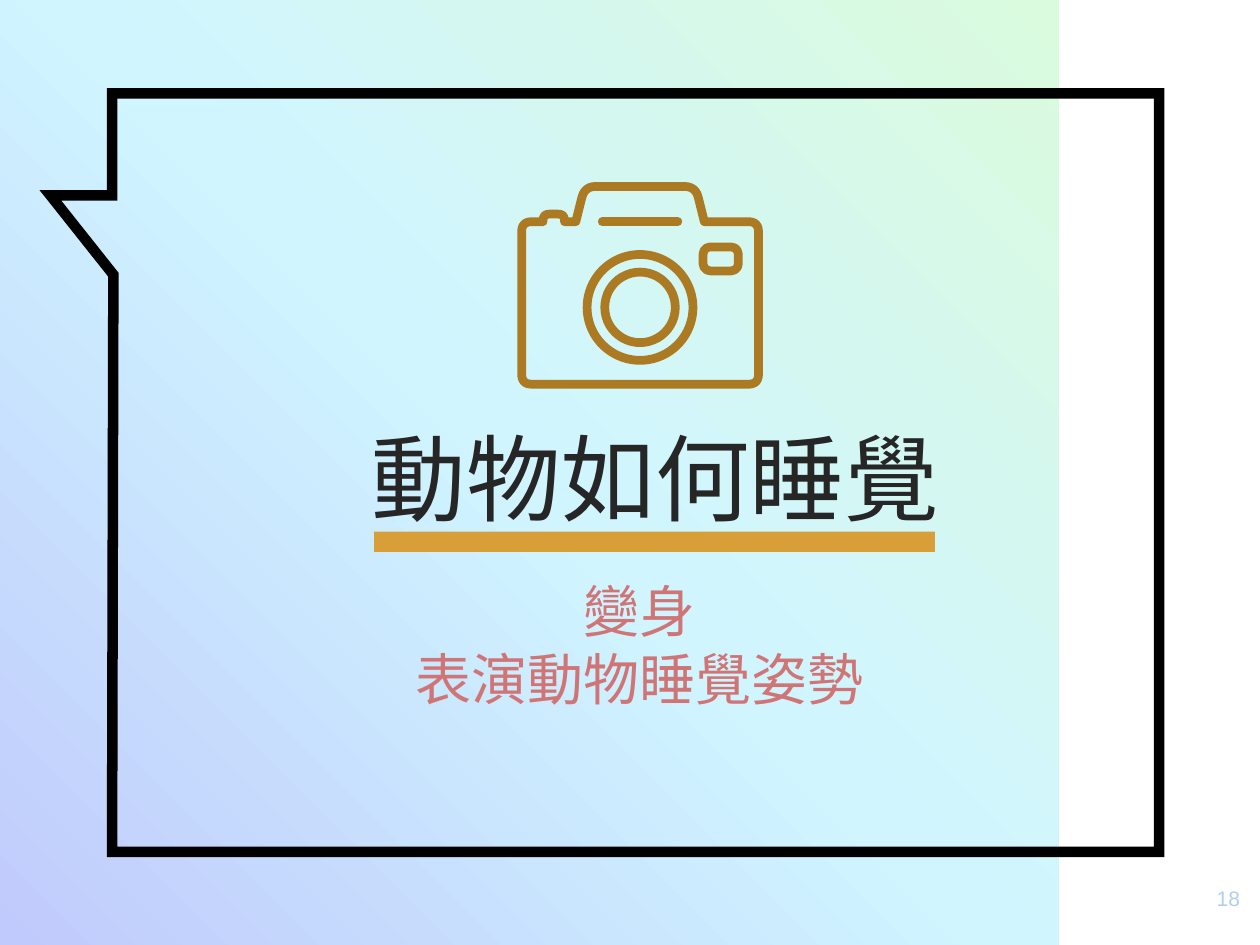
from copy import deepcopy

from lxml import etree
from pptx import Presentation
from pptx.dml.color import RGBColor
from pptx.enum.shapes import MSO_CONNECTOR, MSO_SHAPE
from pptx.enum.text import MSO_ANCHOR, MSO_AUTO_SIZE, PP_ALIGN
from pptx.oxml.ns import qn
from pptx.util import Inches, Pt

RECTANGLE, ROUNDED, OVAL = MSO_SHAPE.RECTANGLE, MSO_SHAPE.ROUNDED_RECTANGLE, MSO_SHAPE.OVAL
STRAIGHT = MSO_CONNECTOR.STRAIGHT
CENTER, RIGHT = PP_ALIGN.CENTER, PP_ALIGN.RIGHT
TOP, MIDDLE = MSO_ANCHOR.TOP, MSO_ANCHOR.MIDDLE
NO_AUTOFIT = MSO_AUTO_SIZE.NONE

THEME = {
    "gradient": ["C0CAFC", "D0F5FF", "DAFBDD"],
    "bubble": "000000", "bubble_width": 6,
    "camera": "AB7A22", "camera_width": 5,
    "underline": "D89F39",
    "title": {"size": 54, "font": "Noto Sans CJK SC", "color": "262626"},
    "subtitle": {"size": 32, "font": "Noto Sans CJK SC", "color": "D07576"},
    "number": {"size": 12, "font": "Arial", "color": "AFCFEC"},
}

TITLE = "動物如何睡覺"
SUBTITLE = ["變身", "表演動物睡覺姿勢"]
SLIDE_NUMBER = "18"

BUBBLE = [(0.89, 0.74), (9.2, 0.74), (9.2, 6.76), (0.89, 6.76),
          (0.9, 2.18), (0.4, 1.55), (0.89, 1.55)]
# Corners of the camera body: x, y, rounding
CAMERA_BODY = [(5.59, 1.76, 0), (5.52, 1.48, 0.09), (4.64, 1.48, 0.09), (4.57, 1.76, 0),
               (4.48, 1.76, 0), (4.48, 1.7, 0.05), (4.31, 1.7, 0.05), (4.31, 1.76, 0),
               (4.14, 1.76, 0.08), (4.14, 3.05, 0.08), (6.02, 3.05, 0.08), (6.02, 1.76, 0.08)]
LENS_CENTER, LENS_RADII = (5.08, 2.44), (0.42, 0.28)
VIEWFINDER = (5.58, 1.96, 0.28, 0.19)
CAMERA_SLOT = (4.78, 5.38, 1.76)


def color(value):
    return RGBColor.from_string(value)


def rounded_outline(corners, steps=6):
    """Replace each rounded corner by points on a quadratic curve."""
    points = []
    for index, (x, y, radius) in enumerate(corners):
        if not radius:
            points.append((x, y))
            continue
        ends = []
        for other_x, other_y, _ in (corners[index - 1], corners[(index + 1) % len(corners)]):
            length = ((other_x - x) ** 2 + (other_y - y) ** 2) ** 0.5
            share = min(radius / length, 1)
            ends.append((x + (other_x - x) * share, y + (other_y - y) * share))
        (start_x, start_y), (end_x, end_y) = ends
        for step in range(steps + 1):
            t = step / steps
            a, b, c = (1 - t) ** 2, 2 * t * (1 - t), t ** 2
            points.append((a * start_x + b * x + c * end_x, a * start_y + b * y + c * end_y))
    return points


def add_filled(slide, kind, box, fill=None):
    shape = slide.shapes.add_shape(kind, *map(Inches, box))
    shape.shadow.inherit = False
    shape.line.fill.background()
    if fill:
        shape.fill.solid()
        shape.fill.fore_color.rgb = color(fill)
    else:
        shape.fill.background()
    return shape


def add_outline(slide, points):
    points = [(Inches(x), Inches(y)) for x, y in points]
    builder = slide.shapes.build_freeform(*points[0])
    builder.add_line_segments(points[1:], close=True)
    shape = builder.convert_to_shape()
    shape.shadow.inherit = False
    shape.fill.background()
    return shape


def style_line(shape, name, join):
    shape.line.color.rgb = color(THEME[name])
    shape.line.width = Pt(THEME[name + "_width"])
    line = shape.line._get_or_add_ln()
    if join == "round":
        line.set("cap", "rnd")
    etree.SubElement(line, qn("a:" + join))


def add_gradient_panel(slide):
    panel = add_filled(slide, RECTANGLE, (0, 0, 8.4, 7.5))
    panel.fill.gradient()
    panel.fill.gradient_angle = 45
    stop_list = panel._element.spPr.find(qn("a:gradFill")).find(qn("a:gsLst"))
    stop_list.append(deepcopy(stop_list[-1]))
    for index, (stop, value) in enumerate(zip(panel.fill.gradient_stops, THEME["gradient"])):
        stop.position = index / 2
        stop.color.rgb = color(value)


def write_text(shape, box, lines, style, align, inset, anchor=TOP):
    shape.left, shape.top, shape.width, shape.height = map(Inches, box)
    frame = shape.text_frame
    frame.word_wrap = True
    frame.auto_size = NO_AUTOFIT
    frame.vertical_anchor = anchor
    frame.margin_left = frame.margin_right = Inches(0.1)
    frame.margin_top = frame.margin_bottom = Inches(inset)
    frame.text = "\n".join(lines)
    for paragraph in frame.paragraphs:
        paragraph.alignment = align
        font = paragraph.font
        font.size = Pt(style["size"])
        font.name = style["font"]
        font.color.rgb = color(style["color"])
        east_asian = etree.Element(qn("a:ea"), typeface=style["font"])
        font._element.find(qn("a:latin")).addnext(east_asian)


def add_camera(slide):
    parts = [add_outline(slide, rounded_outline(CAMERA_BODY))]
    left, right, y = map(Inches, CAMERA_SLOT)
    slot = slide.shapes.add_connector(STRAIGHT, left, y, right, y)
    parts.append(slot)
    x, y = LENS_CENTER
    for radius in LENS_RADII:
        parts.append(add_filled(slide, OVAL, (x - radius, y - radius, 2 * radius, 2 * radius)))
    viewfinder = add_filled(slide, ROUNDED, VIEWFINDER)
    viewfinder.adjustments[0] = 0.3
    parts.append(viewfinder)
    for part in parts:
        style_line(part, "camera", "round")
    etree.SubElement(slot._element.spPr, qn("a:effectLst"))


def main():
    presentation = Presentation()
    presentation.slide_width, presentation.slide_height = Inches(10), Inches(7.5)
    slide = presentation.slides.add_slide(presentation.slide_layouts[5])

    add_gradient_panel(slide)
    style_line(add_outline(slide, BUBBLE), "bubble", "miter")

    number = slide.shapes.add_textbox(0, 0, 0, 0)
    write_text(number, (9.34, 6.93, 0.6, 0.57), [SLIDE_NUMBER], THEME["number"], RIGHT, 0.1)

    title = slide.shapes.title
    slide.shapes._spTree.append(title._element)
    write_text(title, (0.7, 3.36, 9, 0.84), [TITLE], THEME["title"], CENTER, 0.1, MIDDLE)

    add_filled(slide, RECTANGLE, (2.97, 4.22, 4.45, 0.16), THEME["underline"])
    subtitle = slide.shapes.add_textbox(0, 0, 0, 0)
    write_text(subtitle, (1.95, 4.53, 6.25, 1.72), SUBTITLE, THEME["subtitle"], CENTER, 0.05)

    add_camera(slide)
    presentation.save("out.pptx")


if __name__ == "__main__":
    main()
